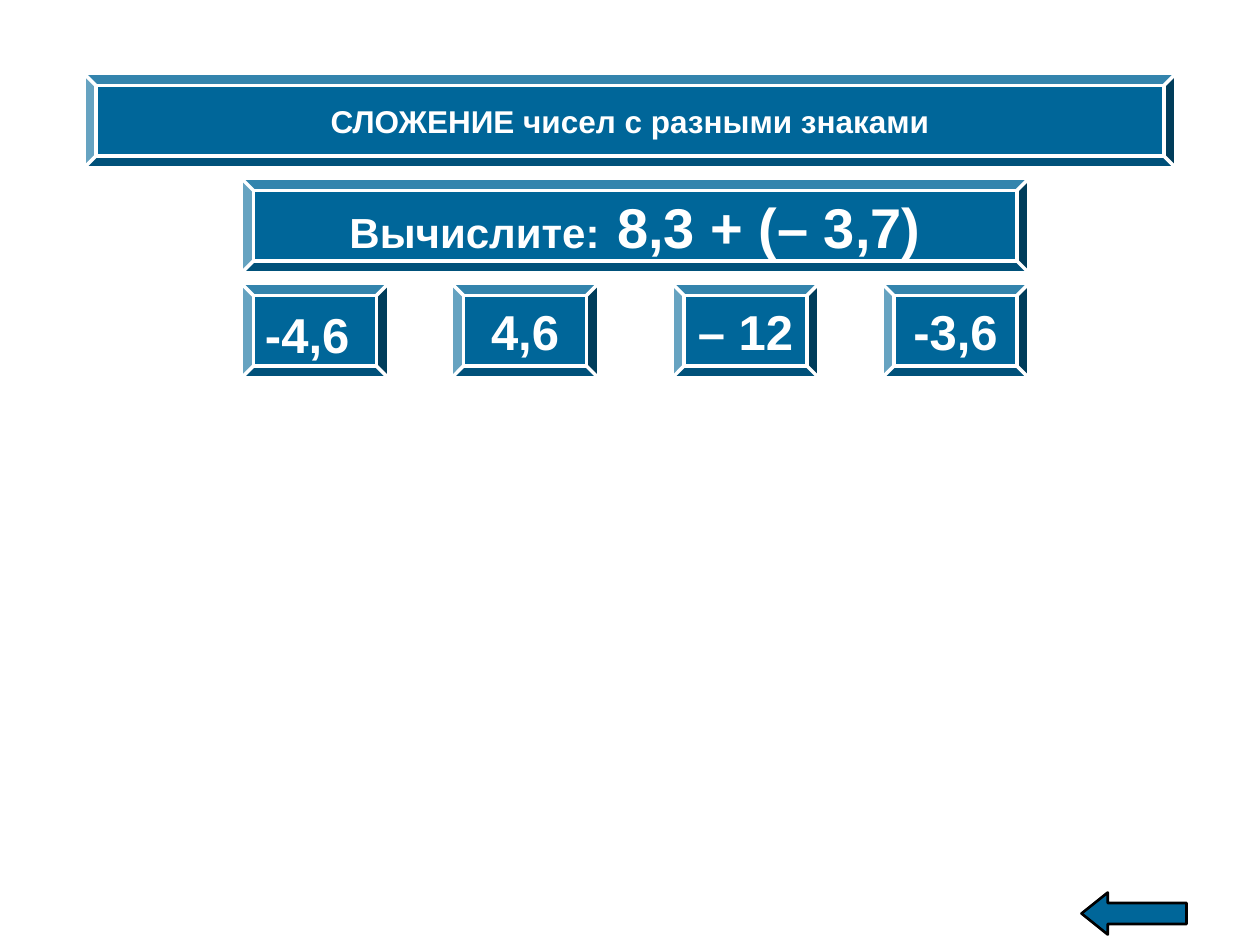
from pptx import Presentation
from pptx.dml.color import RGBColor
from pptx.enum.shapes import MSO_SHAPE as Shape
from pptx.enum.text import MSO_ANCHOR as Anchor, PP_ALIGN as Align
from pptx.util import Pt

PX = 9525  # EMU per px, 96 px to the inch
BLUE, WHITE, BLACK = "006699", "FFFFFF", "000000"

# Content: each text is a list of (words, size in points)
HEADING = [("СЛОЖЕНИЕ чисел с разными знаками", 18)]
QUESTION = [("Вычислите:", 24), ("  ", 18), ("8,3 + (– 3,7)", 32)]
ANSWERS = [
    (184, [("-4,6", 28), (" ", 32)]),
    (344, [("4,6", 28)]),
    (512, [("– 12", 28)]),
    (672, [("-3,6", 28)]),
]

# Layout in px
TOP, ROW_HEIGHT, ROW_STEP = 56, 72, 80
ANSWER_WIDTH = 112


def color(value):
    return RGBColor.from_string(value)


def add_figure(page, kind, left, top, width, height, line_color, line_width):
    figure = page.shapes.add_shape(
        kind, left * PX, top * PX, width * PX, height * PX)
    figure.shadow.inherit = False
    figure.fill.solid()
    figure.fill.fore_color.rgb = color(BLUE)
    figure.line.color.rgb = color(line_color)
    figure.line.width = Pt(line_width)
    return figure


def add_plate(page, row, left, width, spans):
    plate = add_figure(page, Shape.BEVEL, left, TOP + row * ROW_STEP,
                       width, ROW_HEIGHT, WHITE, 2)
    frame = plate.text_frame
    frame.word_wrap = False
    frame.vertical_anchor = Anchor.MIDDLE
    para = frame.paragraphs[0]
    para.alignment = Align.CENTER
    para.font.name = "Arial"
    para.font.bold = True
    para.font.color.rgb = color(WHITE)
    for words, size in spans:
        span = para.add_run()
        span.text = words
        span.font.size = Pt(size)


def main():
    deck = Presentation()
    deck.slide_width, deck.slide_height = 960 * PX, 720 * PX
    page = deck.slides.add_slide(deck.slide_layouts[6])

    # Back arrow
    arrow = add_figure(page, Shape.LEFT_ARROW, 824, 680, 80, 32, BLACK, 1.5)
    arrow.adjustments[1] = 0.625

    # Heading, question and answer plates
    add_plate(page, 0, 64, 832, HEADING)
    add_plate(page, 1, 184, 600, QUESTION)
    for left, spans in ANSWERS:
        add_plate(page, 2, left, ANSWER_WIDTH, spans)

    deck.save("out.pptx")


if __name__ == "__main__":
    main()
